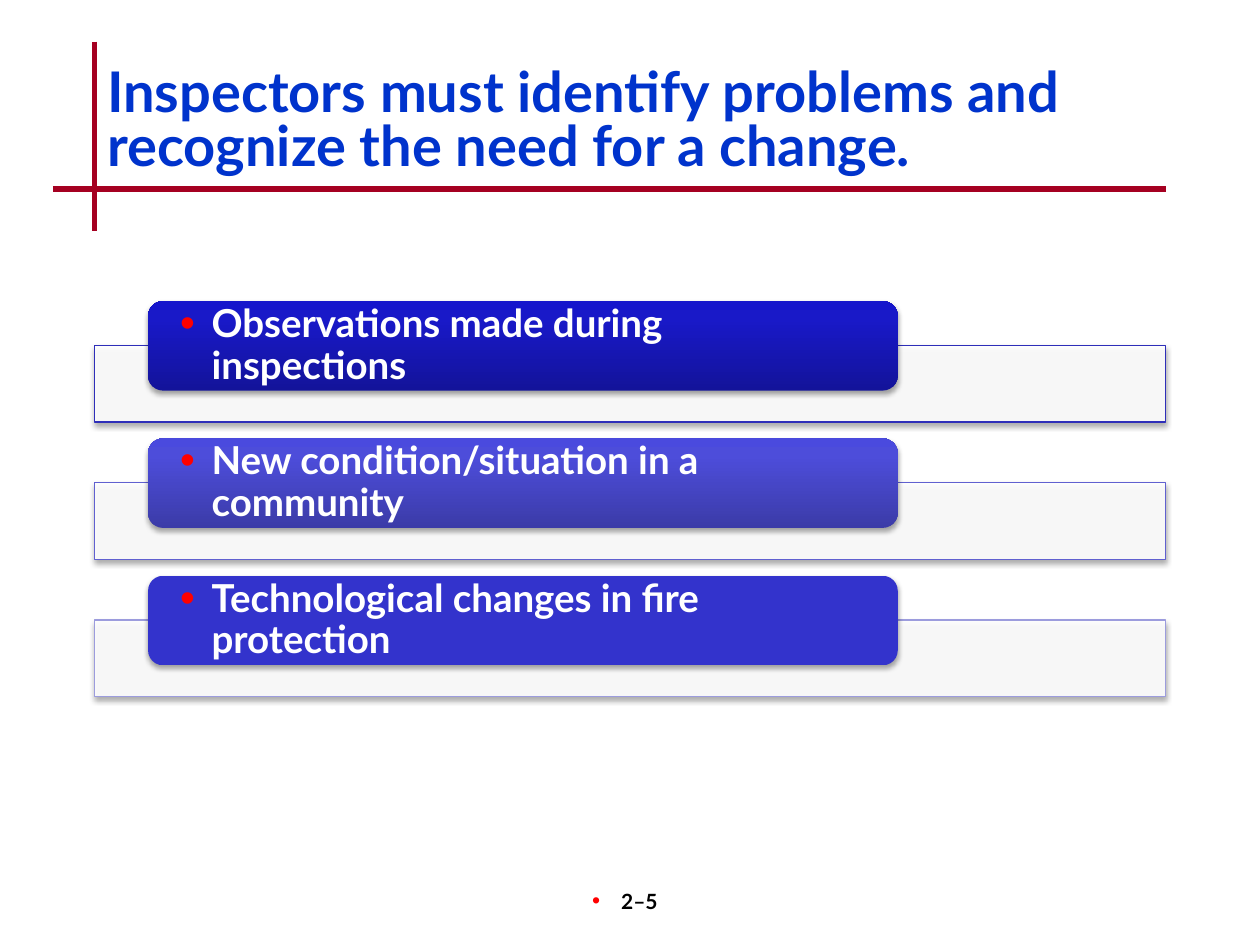
from pptx import Presentation
from pptx.dml.color import RGBColor
from pptx.enum.shapes import MSO_CONNECTOR, MSO_SHAPE
from pptx.enum.text import MSO_ANCHOR, PP_ALIGN
from pptx.oxml.ns import qn
from pptx.util import Inches, Pt
from lxml.etree import SubElement

COLORS = {
    "title": "0033CC", "rule": "A50021", "bullet": "FF0000",
    "white": "FFFFFF", "black": "000000",
}
FONT = "Lato"
# Label, panel outline, and label fill as (position, colour) stops
REASONS = [
    ("Observations made during inspections", "2E2EB9",
     [(0, "13139A"), (80, "1919C8"), (100, "1515CC")]),
    ("New condition/situation in a community", "6060D0",
     [(0, "3B3BA8"), (80, "4D4DDA"), (100, "4A4ADE")]),
    ("Technological changes in fire protection", "9C9CDD",
     [(0, "3333CC"), (100, "3333CC")]),
]


def rgb(hex_color):
    return RGBColor.from_string(hex_color)


def add_color(parent, hex_color, alpha=None):
    color = SubElement(parent, qn("a:srgbClr"), val=hex_color)
    if alpha is not None:
        SubElement(color, qn("a:alpha"), val=str(alpha * 1000))


def add_shadow(shape):
    shape.shadow.inherit = False
    effects = shape._element.spPr.find(qn("a:effectLst"))
    shadow = SubElement(effects, qn("a:outerShdw"), blurRad=str(Pt(3.1)),
                        dist=str(Pt(1.8)), dir="5400000", rotWithShape="0")
    add_color(shadow, COLORS["black"], 35)


def add_bullet(paragraph, size, indent):
    props = paragraph._p.get_or_add_pPr()
    props.set("marL", str(Inches(indent)))
    props.set("indent", str(-Inches(indent)))
    add_color(SubElement(props, qn("a:buClr")), COLORS["bullet"])
    SubElement(props, qn("a:buSzPct"), val=str(size * 1000))
    SubElement(props, qn("a:buFont"), typeface="Arial")
    SubElement(props, qn("a:buChar"), char="•")


def style_runs(paragraph, size, color):
    for run in paragraph.runs:
        run.font.name = FONT
        run.font.size = Pt(size)
        run.font.bold = True
        run.font.color.rgb = rgb(color)


def add_rule(slide, x1, y1, x2, y2):
    rule = slide.shapes.add_connector(
        MSO_CONNECTOR.STRAIGHT, Inches(x1), Inches(y1), Inches(x2), Inches(y2))
    rule.line.color.rgb = rgb(COLORS["rule"])
    rule.line.width = Pt(3)
    SubElement(rule._element.spPr, qn("a:effectLst"))


def add_header(slide, left, top, width, height):
    # Crossing rules at the lower left corner of the title
    bottom = top + height
    add_rule(slide, left, top - 0.17, left, bottom + 0.33)
    add_rule(slide, left - 0.33, bottom, left + width, bottom)

    title = slide.shapes.title
    title.left, title.top = Inches(left), Inches(top)
    title.width, title.height = Inches(width), Inches(height)
    frame = title.text_frame
    frame.text = ("Inspectors must identify problems and "
                  "recognize the need for a change.")
    frame.word_wrap = True
    frame.vertical_anchor = MSO_ANCHOR.TOP
    heading = frame.paragraphs[0]
    heading.alignment = PP_ALIGN.LEFT
    heading.line_spacing = 0.8
    style_runs(heading, 32, COLORS["title"])


def fill_gradient(shape, stops):
    shape.fill.gradient()
    shape.fill.gradient_angle = 90
    stop_list = shape._element.spPr.find(qn("a:gradFill")).find(qn("a:gsLst"))
    for stop in list(stop_list):
        stop_list.remove(stop)
    for position, color in stops:
        add_color(SubElement(stop_list, qn("a:gs"), pos=str(position * 1000)), color)


def add_reason(slide, left, top, width, height, reason, outline, stops):
    # Pale panel in the lower part of the row
    panel_height = 0.61
    panel = slide.shapes.add_shape(
        MSO_SHAPE.RECTANGLE, Inches(left), Inches(top + height - panel_height),
        Inches(width), Inches(panel_height))
    panel.fill.solid()
    panel.fill.fore_color.rgb = rgb(COLORS["white"])
    fill_color = panel._element.spPr.find(qn("a:solidFill"))[0]
    SubElement(fill_color, qn("a:alpha"), val="90000")
    panel.line.color.rgb = rgb(outline)
    panel.line.width = Pt(0.75)
    add_shadow(panel)

    # Label overlapping the panel: 5% in, 70% of its width
    label = slide.shapes.add_shape(
        MSO_SHAPE.ROUNDED_RECTANGLE, Inches(left + 0.05 * width), Inches(top),
        Inches(0.7 * width), Inches(0.71))
    fill_gradient(label, stops)
    label.line.fill.background()
    add_shadow(label)
    frame = label.text_frame
    frame.text = reason
    frame.word_wrap = True
    frame.vertical_anchor = MSO_ANCHOR.MIDDLE
    frame.margin_left, frame.margin_right = Inches(0.22), Inches(0.3)
    frame.margin_top = frame.margin_bottom = 0
    line = frame.paragraphs[0]
    line.alignment = PP_ALIGN.LEFT
    line.line_spacing = 0.9
    add_bullet(line, 110, 0.25)
    style_runs(line, 22, COLORS["white"])


def add_reasons(slide, left, top, width, row_height, pitch):
    for row, (reason, outline, stops) in enumerate(REASONS):
        add_reason(slide, left, top + row * pitch, width, row_height,
                   reason, outline, stops)


def add_page_number(slide, left, top, width, height):
    number = slide.shapes.add_textbox(
        Inches(left), Inches(top), Inches(width), Inches(height))
    frame = number.text_frame
    frame.text = "2–5"
    frame.word_wrap = True
    page = frame.paragraphs[0]
    page.alignment = PP_ALIGN.CENTER
    add_bullet(page, 110, 0.23)
    style_runs(page, 12, COLORS["black"])


def main():
    deck = Presentation()
    deck.slide_width, deck.slide_height = Inches(10), Inches(7.5)
    slide = deck.slides.add_slide(deck.slide_layouts[5])
    add_header(slide, 0.75, 0.5, 8.5, 1)
    add_reasons(slide, 0.75, 2.39, 8.5, 0.96, 1.09)
    add_page_number(slide, 3.92, 7, 2.08, 0.5)
    deck.save("out.pptx")


if __name__ == "__main__":
    main()
